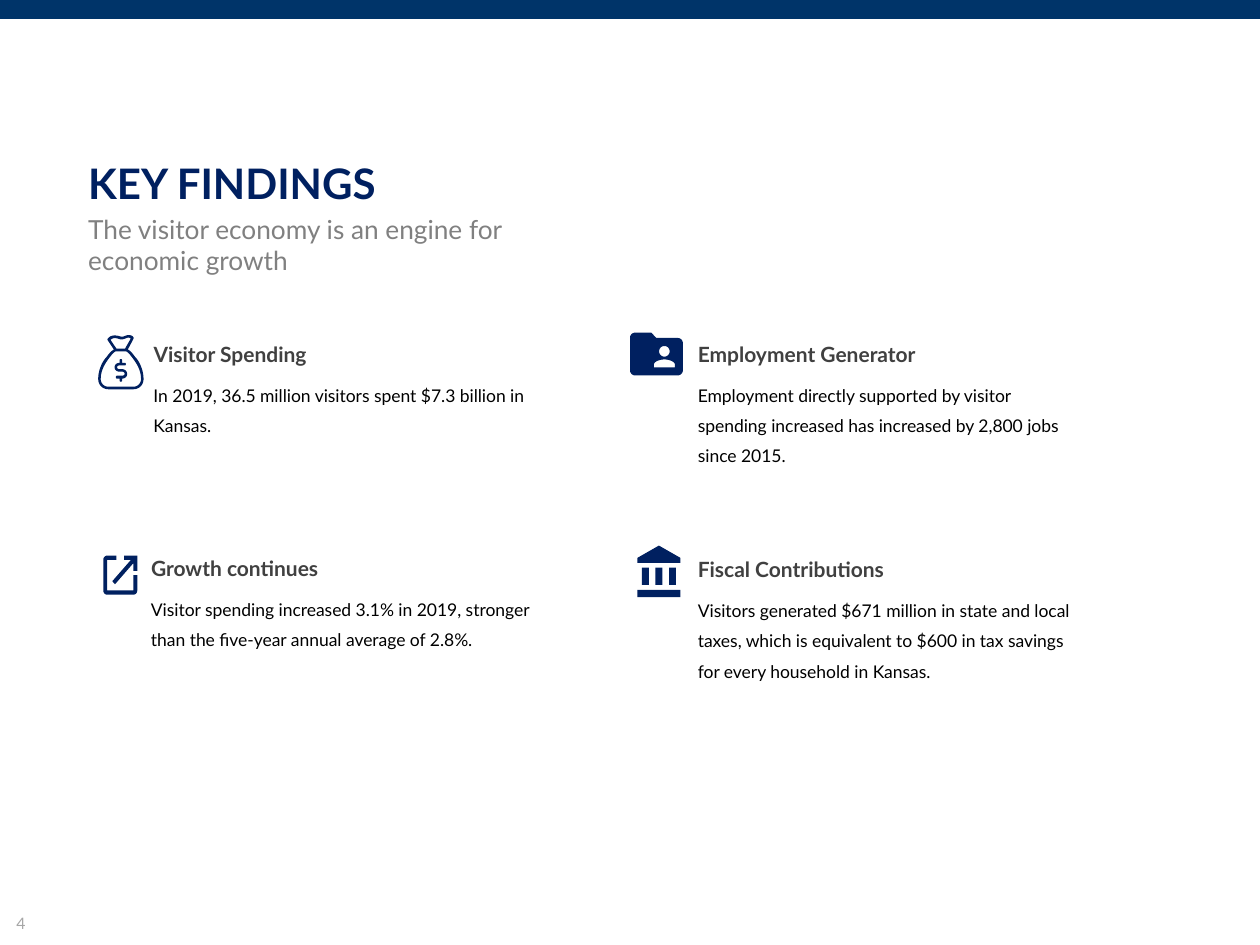
from pptx import Presentation
from pptx.dml.color import RGBColor
from pptx.enum.shapes import MSO_SHAPE
from pptx.enum.text import MSO_ANCHOR, MSO_AUTO_SIZE
from pptx.util import Inches, Pt

RECTANGLE = MSO_SHAPE.RECTANGLE
TOP, MIDDLE = MSO_ANCHOR.TOP, MSO_ANCHOR.MIDDLE
GROW = MSO_AUTO_SIZE.SHAPE_TO_FIT_TEXT

BAR_BLUE = RGBColor(0x00, 0x34, 0x69)
NAVY = RGBColor(0x00, 0x20, 0x60)
DARK_GRAY = RGBColor(0x40, 0x40, 0x40)
GRAY = RGBColor(0x80, 0x80, 0x80)
LIGHT_GRAY = RGBColor(0xA6, 0xA6, 0xA6)
BLACK = RGBColor(0x00, 0x00, 0x00)

FONT = "Lato"
COLUMNS, ROWS = 100, 75
CELL = Inches(0.1)
HEADING_ROWS = 3.1
CURVE_STEPS = 10

MONEY_BAG = (36, 43, [
    [(34, 25), (33, 22, 31, 19, 29, 17), (27, 14, 25, 12, 23.5, 11.5), (28, 3),
     (28.3, 2.4, 28.3, 2, 27.8, 1.5), (27, 0.4, 25.5, 0, 24, 0), (23, 0, 22, 0.4, 21, 0.8),
     (20, 1.2, 19, 1.5, 18, 1.2), (16, 0.6, 14.5, 0.3, 13, 0.3), (11, 0.3, 9, 1, 7.7, 2.7),
     (7.3, 3.2, 7.3, 3.6, 7.5, 4), (12.5, 11.5), (11, 12.2, 9, 14, 7, 17),
     (5, 19, 3, 22, 2, 25), (0.7, 28, 0, 31.5, 0, 35), (0, 39.5, 3.5, 43, 8, 43), (28, 43),
     (32.5, 43, 36, 39.5, 36, 35), (36, 31.5, 35.3, 28, 34, 25)],
    [(9.8, 3.8), (11, 2.8, 12, 2.4, 13, 2.4), (14.3, 2.4, 15.7, 2.8, 17, 3.2),
     (18, 3.6, 20, 3.4, 21.3, 2.8), (22.3, 2.4, 23.2, 2, 24, 2), (24.7, 2, 25.3, 2.3, 25.8, 2.8),
     (21.3, 10.8), (14.5, 10.8)],
    [(28, 41), (8, 41), (4.7, 41, 2, 38.3, 2, 35), (2, 29, 4.3, 24, 8.5, 18.5),
     (11, 15, 13, 13, 14.2, 12.9), (21.8, 12.9), (23, 13, 25, 15, 27.5, 18.5),
     (31.7, 24, 34, 29, 34, 35), (34, 38.3, 31.3, 41, 28, 41)],
])
DOLLAR = (10, 18, [
    [(6, 8), (4, 8), (3, 8, 2, 7.5, 2, 6.5), (2, 5.5, 3, 5, 4, 5), (8, 5),
     (8.6, 5, 9, 4.6, 9, 4), (9, 3.4, 8.6, 3, 8, 3), (6, 3), (6, 1), (6, 0.4, 5.6, 0, 5, 0),
     (4.4, 0, 4, 0.4, 4, 1), (4, 3), (2, 3, 0, 4.2, 0, 6.5), (0, 8.8, 2, 10, 4, 10), (6, 10),
     (7.2, 10, 8, 10.7, 8, 11.7), (8, 12.5, 7.2, 13.2, 6, 13.2), (2, 13.2),
     (1.4, 13.2, 1, 13.8, 1, 14.4), (1, 15, 1.4, 15.5, 2, 15.5), (4, 15.5), (4, 17),
     (4, 17.6, 4.4, 18, 5, 18), (5.6, 18, 6, 17.6, 6, 17), (6, 15.5),
     (8.3, 15.5, 10, 13.8, 10, 11.8), (10, 9.8, 8.3, 8, 6, 8)],
])
OUTWARD_ARROW = (18, 18, [
    [(11, 0), (18, 0), (18, 7), (16, 7), (16, 3.4), (6.2, 13.2), (4.8, 11.8), (14.6, 2), (11, 2)],
    [(16, 16), (16, 9), (18, 9), (18, 16), (18, 17.1, 17.1, 18, 16, 18), (2, 18),
     (0.9, 18, 0, 17.1, 0, 16), (0, 2), (0, 0.9, 0.9, 0, 2, 0), (7, 0), (7, 2), (2, 2), (2, 16)],
])
STAFF_FOLDER = (20, 16, [
    [(20, 4), (20, 14), (20, 15.1, 19.1, 16, 18, 16), (2, 16), (0.9, 16, 0, 15.1, 0, 14),
     (0, 2), (0, 0.9, 0.9, 0, 2, 0), (8, 0), (10, 2), (18, 2), (19.1, 2, 20, 2.9, 20, 4)],
    [(13, 5), (11.9, 5, 11, 5.9, 11, 7), (11, 8.1, 11.9, 9, 13, 9),
     (14.1, 9, 15, 8.1, 15, 7), (15, 5.9, 14.1, 5, 13, 5)],
    [(17, 13), (17, 12), (17, 10.67, 14.33, 10, 13, 10), (11.67, 10, 9, 10.67, 9, 12), (9, 13)],
])
BANK = (19, 21, [
    [(9.5, 0), (19, 5), (19, 7), (0, 7), (0, 5)],
    [(0, 18), (19, 18), (19, 21), (0, 21)],
    *[[(x, 9), (x + 3, 9), (x + 3, 16), (x, 16)] for x in (2, 8, 14)],
])

FINDINGS = [
    ((11.2, 26.2, 32.3, 8.6), 20.2, "Visitor Spending",
     "In 2019, 36.5 million visitors spent $7.3 billion in Kansas.",
     [(MONEY_BAG, (7.8, 26.6, 3.6, 4.3)), (DOLLAR, (9.1, 28.5, 1, 1.8))]),
    ((54.4, 26.2, 31, 11), 26.3, "Employment Generator",
     "Employment directly supported by visitor spending increased has increased "
     "by 2,800 jobs since 2015.",
     [(STAFF_FOLDER, (50, 26.4, 4.2, 3.4))]),
    ((11, 43.2, 32.3, 8.6), 20.2, "Growth continues",
     "Visitor spending increased 3.1% in 2019, stronger than the five-year annual "
     "average of 2.8%.",
     [(OUTWARD_ARROW, (8.2, 44.1, 2.7, 3.1))]),
    ((54.4, 43.3, 32.3, 11), 26.3, "Fiscal Contributions",
     "Visitors generated $671 million in state and local taxes, which is equivalent to "
     "$600 in tax savings for every household in Kansas.",
     [(BANK, (50.6, 43.3, 3.4, 4.1))]),
]


def to_lengths(box):
    """Turn a box of grid columns and rows into slide lengths."""
    return [round(value * CELL) for value in box]


def add_text(slide, box, lines, size, color, bold=False, spacing=None, inset=True, anchor=TOP):
    """Place one paragraph, with a line break between its lines."""
    frame = slide.shapes.add_textbox(*to_lengths(box)).text_frame
    frame.word_wrap = True
    frame.auto_size = GROW
    frame.vertical_anchor = anchor
    if not inset:
        frame.margin_left = frame.margin_right = frame.margin_top = frame.margin_bottom = 0
    paragraph = frame.paragraphs[0]
    if spacing:
        paragraph.line_spacing = Pt(spacing)
    for index, line in enumerate(lines):
        if index:
            paragraph.add_line_break()
        run = paragraph.add_run()
        run.text = line
        run.font.name = FONT
        run.font.size = Pt(size)
        run.font.bold = bold
        run.font.color.rgb = color


def paint(shape, color):
    """Give a shape a plain fill without line or shadow."""
    shape.shadow.inherit = False
    shape.fill.solid()
    shape.fill.fore_color.rgb = color
    shape.line.fill.background()


def trace(contour):
    """Return the points of a contour, sampling its cubic curves."""
    points = [contour[0]]
    for step in contour[1:]:
        if len(step) == 2:
            points.append(step)
            continue
        x0, y0 = points[-1]
        x1, y1, x2, y2, x3, y3 = step
        for index in range(1, CURVE_STEPS + 1):
            t = index / CURVE_STEPS
            a, b, c, d = (1 - t) ** 3, 3 * t * (1 - t) ** 2, 3 * t * t * (1 - t), t ** 3
            points.append((a * x0 + b * x1 + c * x2 + d * x3, a * y0 + b * y1 + c * y2 + d * y3))
    return points


def add_icon(slide, box, icon):
    """Draw an icon scaled to its box."""
    left, top, width, height = to_lengths(box)
    icon_width, icon_height, contours = icon
    builder = None
    for contour in contours:
        points = [(left + x * width / icon_width, top + y * height / icon_height)
                  for x, y in trace(contour)]
        if builder is None:
            builder = slide.shapes.build_freeform(*points[0])
        else:
            builder.move_to(*points[0])
        builder.add_line_segments(points[1:], close=True)
    paint(builder.convert_to_shape(), NAVY)


def add_header(slide, box):
    """Place the title and subtitle."""
    left, top, width, height = box
    add_text(slide, (left, top, width, 3.6), ["KEY FINDINGS"], 24, NAVY, bold=True,
             spacing=26.2, inset=False, anchor=MIDDLE)
    add_text(slide, (left, top + 4, width, height - 4),
             ["The visitor economy is an engine for", "economic growth"], 15, GRAY, inset=False)


def add_finding(slide, box, heading_width, heading, body, icons):
    """Place a finding's heading, body and icon."""
    left, top, width, height = box
    add_text(slide, (left, top, heading_width, HEADING_ROWS), [heading], 12, DARK_GRAY,
             bold=True, spacing=17.3)
    add_text(slide, (left, top + HEADING_ROWS, width, height - HEADING_ROWS), [body], 10, BLACK,
             spacing=17.3)
    for icon, icon_box in icons:
        add_icon(slide, icon_box, icon)


def main():
    """Build and save the slide."""
    presentation = Presentation()
    presentation.slide_width, presentation.slide_height = COLUMNS * CELL, ROWS * CELL
    slide = presentation.slides.add_slide(presentation.slide_layouts[6])
    paint(slide.shapes.add_shape(RECTANGLE, *to_lengths((0, 0, COLUMNS, 1.5))), BAR_BLUE)
    add_header(slide, (7, 12.9, 43.4, 9))
    for finding in FINDINGS:
        add_finding(slide, *finding)
    add_text(slide, (0, 72, 12.4, 2.5), [" 4"], 9, LIGHT_GRAY)
    presentation.save("out.pptx")


if __name__ == "__main__":
    main()
